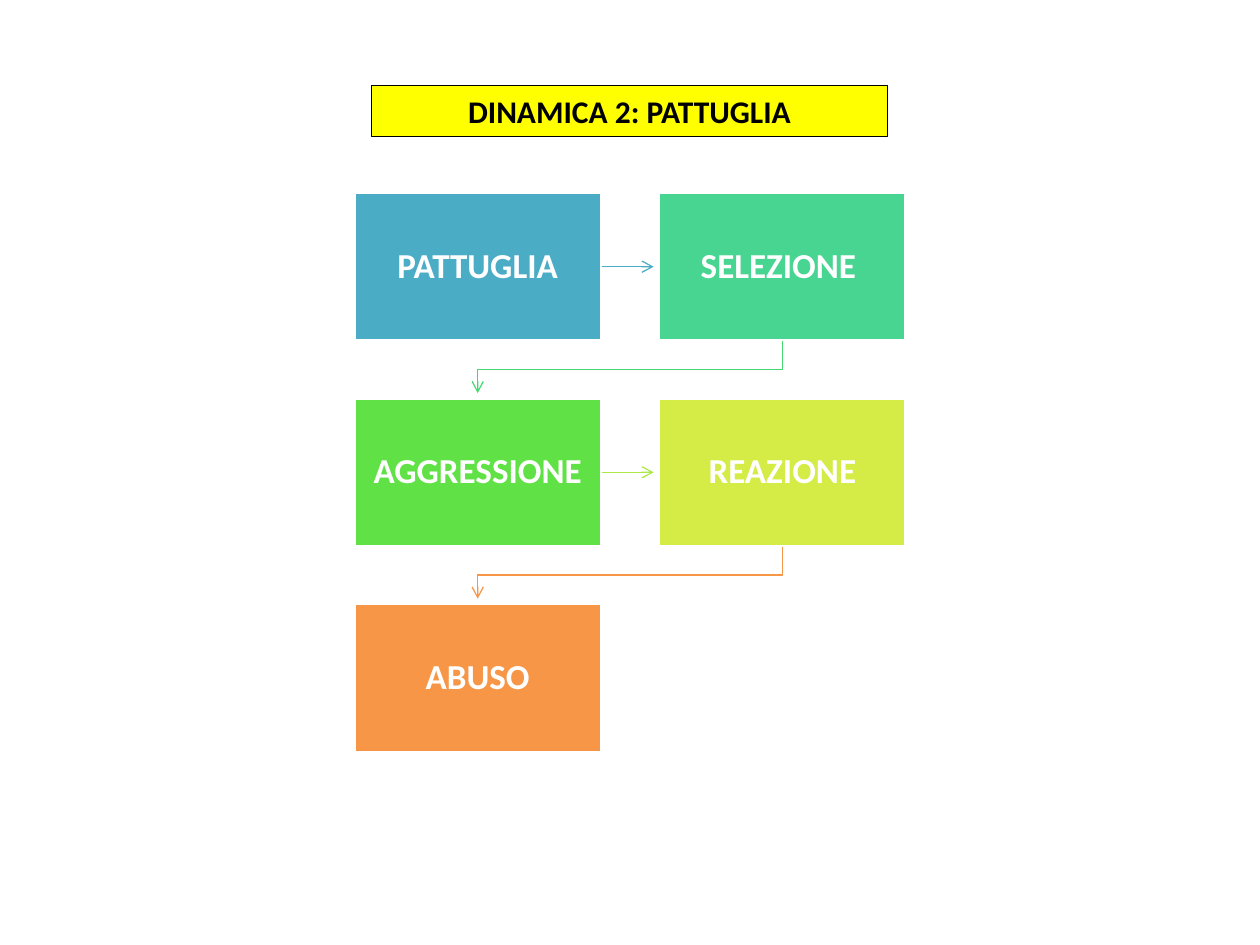
from lxml import etree
from pptx import Presentation
from pptx.dml.color import RGBColor
from pptx.enum.shapes import MSO_CONNECTOR, MSO_SHAPE
from pptx.enum.text import MSO_ANCHOR, PP_ALIGN
from pptx.oxml.ns import qn
from pptx.util import Pt

RECTANGLE = MSO_SHAPE.RECTANGLE
STRAIGHT = MSO_CONNECTOR.STRAIGHT
CENTER = PP_ALIGN.CENTER
MIDDLE = MSO_ANCHOR.MIDDLE

TITLE = "DINAMICA 2: PATTUGLIA"
STEPS = [
    ("PATTUGLIA", "4BACC6"),
    ("SELEZIONE ", "48D491"),
    ("AGGRESSIONE", "60E146"),
    ("REAZIONE", "D5EC46"),
    ("ABUSO", "F79646"),
]
ARROW_COLORS = ["4BACC6", "47D872", "ACE946", "F79646"]

THEME = {
    "font": "Calibri",
    "title_size": 18,
    "step_size": 20,
    "white": "FFFFFF",
    "black": "000000",
    "yellow": "FFFF00",
}

COLUMNS = 2
LEFT, TOP = 202.2, 109.9
BOX_WIDTH, BOX_HEIGHT = 141.6, 85
COLUMN_STEP, ROW_STEP = 174.1, 117.5
BOX_INSET = 10.5
ARROW_GAP = 2.8
BEND_DROP = 16.2


def style_line(line, color, width):
    line.color.rgb = RGBColor.from_string(color)
    line.width = Pt(width)


def add_box(slide, text, area, fill, outline, outline_width, color, size):
    box = slide.shapes.add_shape(RECTANGLE, *map(Pt, area))
    box.shadow.inherit = False
    box.fill.solid()
    box.fill.fore_color.rgb = RGBColor.from_string(fill)
    style_line(box.line, outline, outline_width)
    frame = box.text_frame
    frame.word_wrap = True
    frame.vertical_anchor = MIDDLE
    para = frame.paragraphs[0]
    para.alignment = CENTER
    span = para.add_run()
    span.text = text
    span.font.name = THEME["font"]
    span.font.size = Pt(size)
    span.font.bold = True
    span.font.color.rgb = RGBColor.from_string(color)
    return box


def add_step(slide, index):
    text, fill = STEPS[index]
    row, column = divmod(index, COLUMNS)
    area = (LEFT + column * COLUMN_STEP, TOP + row * ROW_STEP, BOX_WIDTH, BOX_HEIGHT)
    box = add_box(slide, text, area, fill, THEME["white"], 2, THEME["white"], THEME["step_size"])
    frame = box.text_frame
    frame.margin_left = frame.margin_right = Pt(BOX_INSET)
    frame.margin_top = frame.margin_bottom = Pt(BOX_INSET)
    frame.paragraphs[0].line_spacing = 0.9
    return box


def finish_arrow(arrow, color):
    style_line(arrow.line, color, 0.75)
    outline = arrow._element.spPr.find(qn("a:ln"))
    etree.SubElement(outline, qn("a:tailEnd"), type="arrow")


def add_straight_arrow(slide, source, target, color):
    middle = source.top + source.height // 2
    start = source.left + source.width
    arrow = slide.shapes.add_connector(STRAIGHT, start, middle, target.left - Pt(ARROW_GAP), middle)
    arrow.begin_connect(source, 3)
    finish_arrow(arrow, color)
    etree.SubElement(arrow._element.spPr, qn("a:effectLst"))


def add_bent_arrow(slide, source, target, color):
    start_x = source.left + source.width // 2
    end_x = target.left + target.width // 2
    start_y = source.top + source.height
    bend_y = start_y + Pt(BEND_DROP)
    builder = slide.shapes.build_freeform(start_x, start_y)
    builder.add_line_segments(
        [(start_x, bend_y), (end_x, bend_y), (end_x, target.top - Pt(ARROW_GAP))], close=False
    )
    arrow = builder.convert_to_shape()
    arrow.fill.background()
    finish_arrow(arrow, color)
    arrow.shadow.inherit = False


def main():
    deck = Presentation()
    deck.slide_width, deck.slide_height = Pt(720), Pt(540)
    page = deck.slides.add_slide(deck.slide_layouts[6])
    boxes = [add_step(page, index) for index in range(len(STEPS))]
    for source, target, color in zip(boxes, boxes[1:], ARROW_COLORS):
        add_arrow = add_straight_arrow if source.top == target.top else add_bent_arrow
        add_arrow(page, source, target, color)
    add_box(page, TITLE, (212.4, 48.8, 294.6, 29.1), THEME["yellow"], THEME["black"], 0.75,
            THEME["black"], THEME["title_size"])
    deck.save("out.pptx")


if __name__ == "__main__":
    main()
